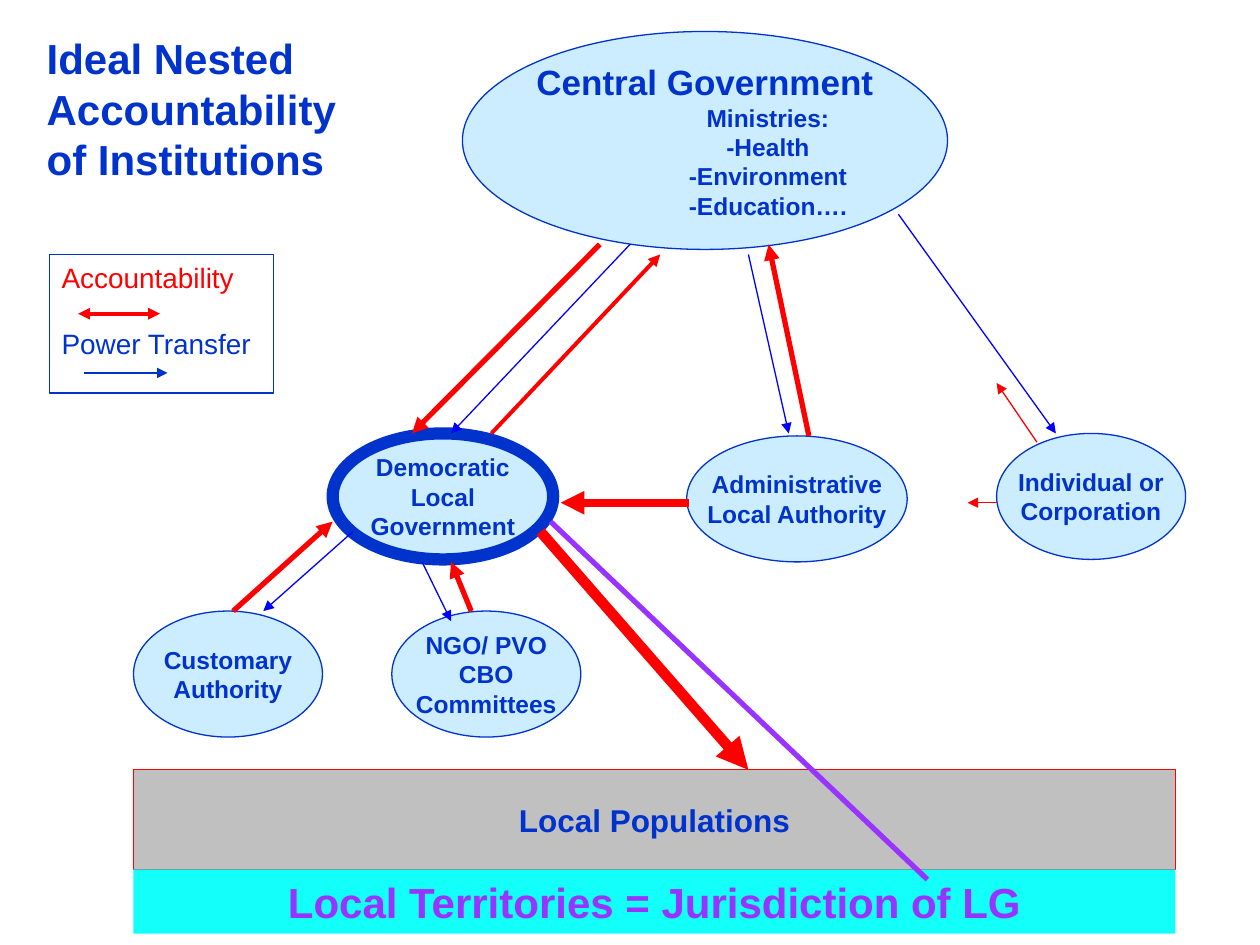
from dataclasses import dataclass

from lxml.etree import SubElement
from pptx import Presentation
from pptx.dml.color import RGBColor
from pptx.enum.shapes import MSO_CONNECTOR, MSO_SHAPE
from pptx.enum.text import MSO_ANCHOR, PP_ALIGN
from pptx.oxml.ns import qn
from pptx.util import Pt


@dataclass
class Theme:
    font: str = "Arial"
    navy: str = "0033CC"
    blue: str = "0000FF"
    red: str = "FF0000"
    violet: str = "9933FF"
    sky: str = "CCECFF"
    gray: str = "C0C0C0"
    cyan: str = "13FFF9"
    title: int = 24
    head: int = 20
    band: int = 18
    key: int = 16
    node: int = 14


PX = 9144  # 100 px to the inch
theme = Theme()


def draw(kind, box, fill, line, weight=0.75):
    shape = slide.shapes.add_shape(kind, *[n * PX for n in box])
    shape.shadow.inherit = False
    if fill:
        shape.fill.solid()
        shape.fill.fore_color.rgb = RGBColor.from_string(fill)
    else:
        shape.fill.background()
    if line:
        shape.line.color.rgb = RGBColor.from_string(line)
        shape.line.width = Pt(weight)
    else:
        shape.line.fill.background()
    return shape


def write(shape, text, size, color, bold=True, align=PP_ALIGN.CENTER,
          anchor=MSO_ANCHOR.MIDDLE, wrap=False):
    frame = shape.text_frame
    frame.text = text
    frame.word_wrap = wrap
    frame.vertical_anchor = anchor
    for para in frame.paragraphs:
        para.alignment = align
        para.line_spacing = Pt(round(size * 1.2, 1))
        for run in para.runs:
            run.font.name = theme.font
            run.font.size = Pt(size)
            run.font.bold = bold
            run.font.color.rgb = RGBColor.from_string(color)
    return frame


deck = Presentation()
deck.slide_width, deck.slide_height = 1000 * PX, 750 * PX
slide = deck.slides.add_slide(deck.slide_layouts[5])

# Title
title = slide.shapes.title
title.left, title.top, title.width, title.height = [n * PX for n in (27, 21, 350, 130)]
write(title, "Ideal Nested\nAccountability\nof Institutions", theme.title, theme.navy,
      align=PP_ALIGN.LEFT, anchor=MSO_ANCHOR.TOP, wrap=True)

# Central government, with its ministries set to the right
center = draw(MSO_SHAPE.OVAL, (367, 25, 385, 173), theme.sky, theme.navy)
frame = write(center, "Central Government\nMinistries:\n-Health\n-Environment\n-Education….",
              theme.node, theme.navy)
first, *rest = frame.paragraphs
first.line_spacing = Pt(theme.head * 1.2)
first.runs[0].font.size = Pt(theme.head)
for para in rest:
    props = para._p.get_or_add_pPr()
    props.set("marL", str(100 * PX))
    props.set("indent", "0")

# Local bodies
nodes = [
    ("Democratic\nLocal\nGovernment", (264, 344, 175, 100), 7),
    ("Administrative\nLocal Authority", (545, 346, 175, 100), 0.75),
    ("Individual or\nCorporation", (791, 344, 150, 100), 0.75),
    ("Customary\nAuthority", (106, 485, 150, 100), 0.75),
    ("NGO/ PVO\nCBO\nCommittees", (311, 485, 150, 100), 0.75),
]
for text, box, weight in nodes:
    oval = draw(MSO_SHAPE.OVAL, box, theme.sky, theme.navy, weight)
    write(oval, text, theme.node, theme.navy)

# Population and territory bands
people = draw(MSO_SHAPE.RECTANGLE, (106, 611, 827, 79), theme.gray, theme.red)
write(people, "Local Populations", theme.band, theme.navy)
land = draw(MSO_SHAPE.RECTANGLE, (106, 690, 827, 51), theme.cyan, None)
write(land, "Local Territories = Jurisdiction of LG", theme.title, theme.violet)

# Legend
draw(MSO_SHAPE.RECTANGLE, (39, 202, 178, 110), None, theme.navy)
for text, top, color in [("Accountability", 202, theme.red),
                         ("Power Transfer", 254, theme.navy)]:
    label = slide.shapes.add_textbox(39 * PX, top * PX, 178 * PX, 37 * PX)
    write(label, text, theme.key, color, bold=False, align=PP_ALIGN.LEFT,
          anchor=MSO_ANCHOR.TOP, wrap=True)

# Links: start, end, colour, weight, arrowheads
links = [
    # Power transfer
    ((500, 194), (358, 344), theme.blue, 0.75, ["tailEnd"]),
    ((594, 202), (626, 344), theme.blue, 0.75, ["tailEnd"]),
    ((713, 170), (838, 344), theme.blue, 0.75, ["tailEnd"]),
    ((280, 422), (209, 485), theme.blue, 0.75, ["tailEnd"]),
    ((335, 446), (358, 493), theme.blue, 0.75, ["tailEnd"]),
    # Accountability
    ((390, 344), (524, 202), theme.red, 2.25, ["tailEnd"]),
    ((642, 346), (610, 194), theme.red, 3, ["tailEnd"]),
    ((185, 485), (264, 414), theme.red, 3, ["tailEnd"]),
    ((374, 485), (358, 446), theme.red, 3, ["tailEnd"]),
    ((429, 422), (594, 611), theme.red, 6, ["tailEnd"]),
    ((547, 399), (445, 399), theme.red, 4.5, ["tailEnd"]),
    ((476, 194), (327, 344), theme.red, 3, ["tailEnd"]),
    ((823, 351), (791, 304), theme.red, 0.75, ["tailEnd"]),
    ((791, 399), (768, 399), theme.red, 0.75, ["tailEnd"]),
    # Legend samples
    ((62, 249), (127, 249), theme.red, 2.25, ["headEnd", "tailEnd"]),
    ((67, 296), (133, 296), theme.navy, 0.75, ["tailEnd"]),
    # Jurisdiction
    ((437, 414), (736, 698), theme.violet, 3, []),
]
for start, end, color, weight, heads in links:
    link = slide.shapes.add_connector(MSO_CONNECTOR.STRAIGHT,
                                      *[n * PX for n in start + end])
    link.line.color.rgb = RGBColor.from_string(color)
    link.line.width = Pt(weight)
    for head in heads:
        SubElement(link.line._get_or_add_ln(), qn("a:" + head), type="triangle")
    SubElement(link._element.spPr, qn("a:effectLst"))

deck.save("out.pptx")
